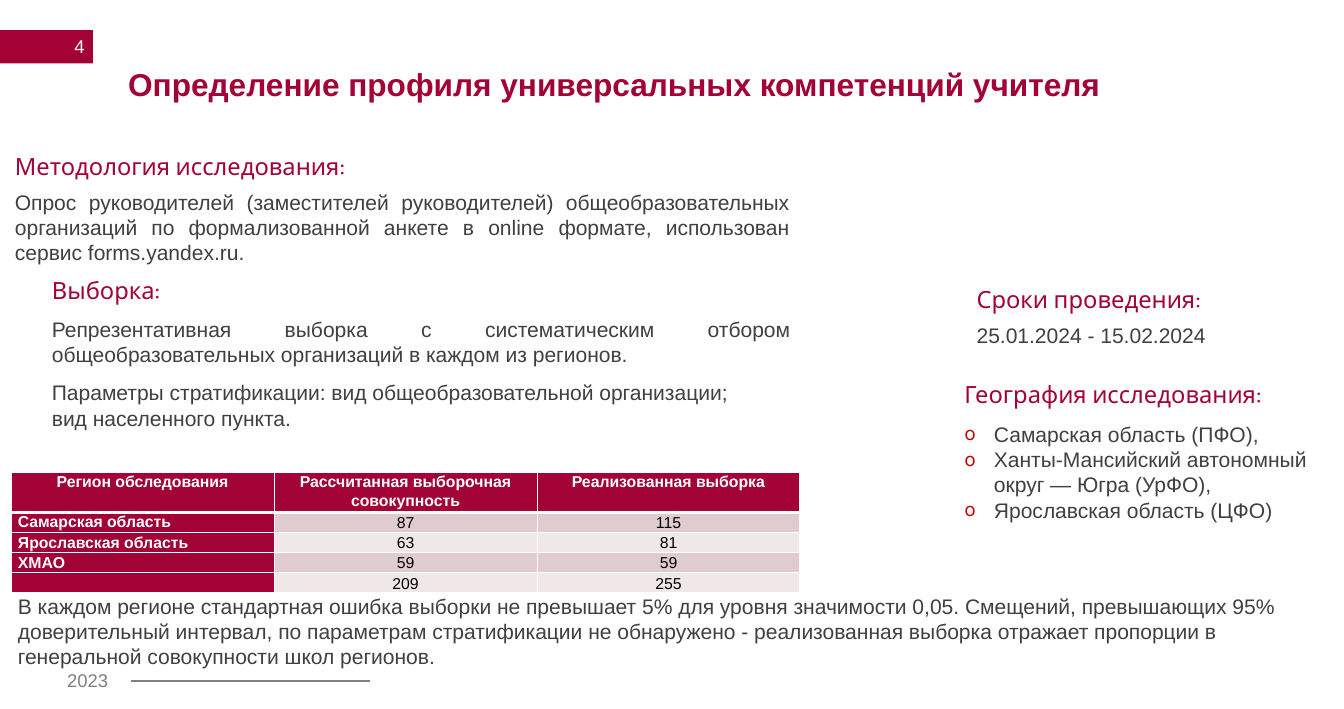
from lxml import etree
from pptx import Presentation
from pptx.dml.color import RGBColor
from pptx.enum.shapes import MSO_CONNECTOR as LINE, MSO_SHAPE as SHAPE
from pptx.enum.text import MSO_ANCHOR as ANCHOR, MSO_AUTO_SIZE as AUTO, PP_ALIGN as ALIGN
from pptx.oxml.ns import qn
from pptx.util import Cm, Pt

RED, GREY, DARK, WHITE, BLACK = "A30236", "808080", "404040", "FFFFFF", "000000"
BANDS = ["F0E7E8", "E0CCCE"]

# Character formats: font attributes and colour
TITLE = (dict(name="Arial", size=Pt(24), bold=True), RED)
HEAD = (dict(name="Karla", size=Pt(18), bold=False), RED)
BODY = (dict(name="Arial", size=Pt(16), bold=False), DARK)
YEAR = (dict(name="Arial", size=Pt(14)), GREY)
NUMBER = (dict(name="Arial", size=Pt(14)), WHITE)
CELL_HEAD = (dict(name="Arial", size=Pt(12), bold=True), WHITE)
CELL = (dict(name="Arial", size=Pt(12), bold=False), BLACK)

# Paragraph formats
FIRST = dict(space_before=Pt(0), alignment=ALIGN.LEFT)
NEXT = dict(space_before=Pt(7), alignment=ALIGN.LEFT)
JUST = dict(space_before=Pt(7), alignment=ALIGN.JUSTIFY)
WIDE = dict(space_before=Pt(9.6), alignment=ALIGN.LEFT)
WIDE_JUST = dict(space_before=Pt(9.6), alignment=ALIGN.JUSTIFY)
CENTER = dict(space_before=Pt(0), alignment=ALIGN.CENTER)
RIGHT = dict(space_before=Pt(0), alignment=ALIGN.RIGHT)


def rgb(color):
    return RGBColor.from_string(color)


def apply(obj, values):
    for name, value in values.items():
        setattr(obj, name, value)


def place(s, left, top, width, height):
    apply(s, dict(left=Cm(left), top=Cm(top), width=Cm(width), height=Cm(height)))


def set_bullet(p, char):
    """Give p a red hanging bullet, or no bullet and no indent when char is None."""
    pPr = p._p.get_or_add_pPr()
    indent = Cm(0.79) if char else 0
    pPr.set("marL", str(indent))
    pPr.set("indent", str(-indent))
    if char is None:
        etree.SubElement(pPr, qn("a:buNone"))
        return
    color = etree.SubElement(pPr, qn("a:buClr"))
    etree.SubElement(color, qn("a:srgbClr"), val="C00000")
    etree.SubElement(pPr, qn("a:buFont"), typeface="Karla")
    etree.SubElement(pPr, qn("a:buChar"), char=char)


def write(p, text, style, layout):
    font, color = style
    apply(p, layout)
    r = p.add_run()
    r.text = text
    apply(r.font, font)
    r.font.color.rgb = rgb(color)


def fill_text(tf, lines):
    """Each line is (text, character format, paragraph format[, bullet])."""
    apply(tf, dict(word_wrap=True, auto_size=AUTO.NONE))
    for i, (text, style, layout, *bullet) in enumerate(lines):
        p = tf.paragraphs[0] if i == 0 else tf.add_paragraph()
        write(p, text, style, layout)
        set_bullet(p, bullet[0] if bullet else None)


def add_text(slide, box, lines, **frame):
    s = slide.shapes.add_textbox(*map(Cm, box))
    fill_text(s.text_frame, lines)
    apply(s.text_frame, frame)


def add_bar(slide, box, color):
    s = slide.shapes.add_shape(SHAPE.RECTANGLE, *map(Cm, box))
    s.shadow.inherit = False
    s.fill.solid()
    s.fill.fore_color.rgb = rgb(color)
    s.line.fill.background()


def add_rule(slide, left, right, y, color):
    s = slide.shapes.add_connector(LINE.STRAIGHT, Cm(left), Cm(y), Cm(right), Cm(y))
    s.line.color.rgb = rgb(color)
    s.line.width = Pt(1.5)
    etree.SubElement(s._element.spPr, qn("a:effectLst"))


def set_borders(cell, bottom):
    tcPr = cell._tc.get_or_add_tcPr()
    for i, (side, width) in enumerate(zip("LRTB", (1, 1, 1, bottom))):
        ln = etree.Element(qn("a:ln" + side), w=str(Pt(width)))
        solid = etree.SubElement(ln, qn("a:solidFill"))
        etree.SubElement(solid, qn("a:srgbClr"), val=WHITE)
        tcPr.insert(i, ln)


def fill_cell(cell, text, row, col):
    label = row == 0 or col == 0
    cell.fill.solid()
    cell.fill.fore_color.rgb = rgb(RED if label else BANDS[row % 2])
    apply(cell, dict(margin_left=Cm(0.18), margin_right=Cm(0.18), margin_top=0, margin_bottom=0,
                     vertical_anchor=ANCHOR.TOP if label else ANCHOR.MIDDLE))
    p = cell.text_frame.paragraphs[0]
    p.line_spacing = 1.07
    if text:
        write(p, text, CELL_HEAD if label else CELL, FIRST if row and col == 0 else CENTER)
    else:
        etree.SubElement(p._p, qn("a:endParaRPr"), sz="1200")
    set_borders(cell, 3 if row == 0 else 1)


def add_grid(slide, left, top, width, heights, rows):
    s = slide.shapes.add_table(len(rows), len(rows[0]), Cm(left), Cm(top), Cm(width), Cm(sum(heights)))
    for column in s.table.columns:
        column.width = Cm(width / len(rows[0]))
    for i, (values, height) in enumerate(zip(rows, heights)):
        s.table.rows[i].height = Cm(height)
        for j, text in enumerate(values):
            fill_cell(s.table.cell(i, j), text, i, j)


def main():
    prs = Presentation()
    prs.slide_width, prs.slide_height = Cm(36), Cm(19)
    slide = prs.slides.add_slide(prs.slide_layouts[1])
    title, geography = slide.placeholders

    # Page number, year and footer rule
    add_bar(slide, (0, 0.81, 2.49, 0.89), RED)
    add_text(slide, (0, 0.74, 2.52, 1.02), [("4", NUMBER, RIGHT)], vertical_anchor=ANCHOR.MIDDLE)
    add_text(slide, (1.55, 17.81, 1.7, 0.86), [("2023", YEAR, FIRST)], word_wrap=False)
    add_rule(slide, 3.51, 9.91, 18.26, GREY)

    # Title
    place(title, 1.78, 0.91, 29.34, 1.98)
    fill_text(title.text_frame, [("Определение профиля универсальных компетенций учителя", TITLE, CENTER)])
    apply(title.text_frame, dict(margin_left=0, margin_right=0, margin_top=Cm(0.69), margin_bottom=0,
                                 vertical_anchor=ANCHOR.MIDDLE))

    # Methodology and sample
    add_text(slide, (0.15, 3.94, 21.26, 3.43), [
        ("Методология исследования:", HEAD, FIRST),
        ("Опрос руководителей (заместителей руководителей) общеобразовательных организаций "
         "по формализованной анкете в online формате, использован сервис forms.yandex.ru.", BODY, JUST),
    ])
    add_text(slide, (1.14, 7.26, 20.29, 5.16), [
        ("Выборка:", HEAD, FIRST),
        ("Репрезентативная выборка с систематическим отбором общеобразовательных организаций "
         "в каждом из регионов.", BODY, WIDE_JUST),
        ("Параметры стратификации: вид общеобразовательной организации;", BODY, WIDE_JUST),
        ("вид населенного пункта.", BODY, FIRST),
    ])

    # Sample sizes by region
    add_grid(slide, 0.3, 12.65, 21.13, [1.08] + [0.54] * 4, [
        ("Регион обследования", "Рассчитанная выборочная совокупность", "Реализованная выборка"),
        ("Самарская область", "87", "115"),
        ("Ярославская область", "63", "81"),
        ("ХМАО", "59", "59"),
        ("", "209", "255"),
    ])

    # Dates and geography
    add_text(slide, (25.91, 7.52, 8.28, 2.06), [
        ("Сроки проведения:", HEAD, FIRST),
        ("25.01.2024 - 15.02.2024", BODY, NEXT),
    ])
    place(geography, 25.58, 10.06, 9.98, 4.11)
    fill_text(geography.text_frame, [
        ("География исследования:", HEAD, FIRST),
        ("Самарская область (ПФО),", BODY, WIDE, "o"),
        ("Ханты-Мансийский автономный округ — Югра (УрФО),", BODY, FIRST, "o"),
        ("Ярославская область (ЦФО)", BODY, FIRST, "o"),
    ])

    # Note on sampling error
    add_text(slide, (0.23, 15.77, 34.77, 2.31), [
        ("В каждом регионе стандартная ошибка выборки не превышает 5% для уровня значимости 0,05. "
         "Смещений, превышающих 95% доверительный интервал, по параметрам стратификации не обнаружено - "
         "реализованная выборка отражает пропорции в генеральной совокупности школ регионов.", BODY, FIRST),
    ])
    prs.save("out.pptx")


if __name__ == "__main__":
    main()
